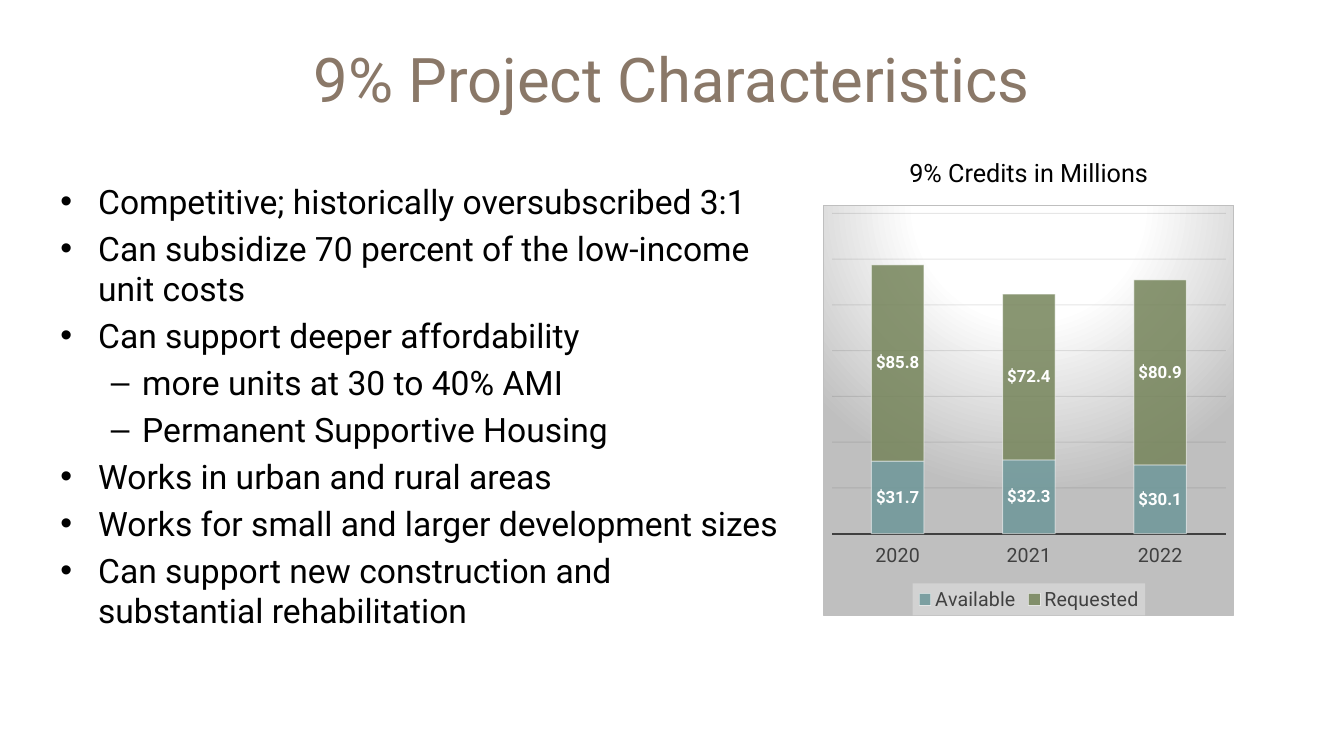
from dataclasses import dataclass

from pptx import Presentation
from pptx.chart.chart import Chart
from pptx.chart.data import CategoryChartData
from pptx.dml.color import RGBColor as RGB
from pptx.enum.chart import XL_CHART_TYPE as ChartType
from pptx.enum.chart import XL_LABEL_POSITION as LabelPos
from pptx.enum.chart import XL_LEGEND_POSITION as LegendPos
from pptx.enum.chart import XL_TICK_LABEL_POSITION as TickLabelPos
from pptx.enum.chart import XL_TICK_MARK as TickMark
from pptx.enum.text import MSO_ANCHOR as Anchor
from pptx.enum.text import MSO_AUTO_SIZE as AutoSize
from pptx.enum.text import PP_ALIGN as Align
from pptx.oxml import parse_xml
from pptx.oxml.ns import nsdecls, qn
from pptx.util import Cm, Pt


@dataclass(frozen=True)
class Theme:
    font: str = "Roboto"
    title: str = "8A7868"
    text: str = "000000"
    axis: str = "404040"
    grid: str = "0D0D0D"
    light: str = "FFFFFF"
    shade: str = "BFBFBF"
    legend: str = "F2F2F2"
    title_size: int = 44
    body_size: int = 24
    caption_size: int = 18
    axis_size: int = 14
    label_size: int = 12
    chart_size: int = 10


@dataclass(frozen=True)
class Box:
    left: float
    top: float
    width: float
    height: float

    def lengths(self) -> tuple:
        return Cm(self.left), Cm(self.top), Cm(self.width), Cm(self.height)


@dataclass(frozen=True)
class Level:
    bullet: str
    indent: float
    hanging: float


@dataclass(frozen=True)
class Item:
    text: str
    level: int = 0


@dataclass(frozen=True)
class Series:
    name: str
    values: tuple
    color: str


THEME = Theme()
TITLE_BOX = Box(1.7, 0.36, 30.48, 3.18)
BODY_BOX = Box(1.27, 4.42, 18.62, 11.84)
CAPTION_BOX = Box(22.43, 3.84, 6.99, 1.02)
CHART_BOX = Box(20.75, 5.16, 10.36, 10.36)
LEVELS = (Level("•", 0.95, 0.95), Level("–", 2.06, 0.79))
ITEMS = (
    Item("Competitive; historically oversubscribed 3:1"),
    Item("Can subsidize 70 percent of the low-income unit costs"),
    Item("Can support deeper affordability"),
    Item("more units at 30 to 40% AMI", 1),
    Item("Permanent Supportive Housing", 1),
    Item("Works in urban and rural areas"),
    Item("Works for small and larger development sizes"),
    Item("Can support new construction and substantial rehabilitation"),
)
YEARS = ("2020", "2021", "2022")
CREDITS = (
    Series("Available", (31.7, 32.3, 30.1), "6D9799"),
    Series("Requested", (85.8, 72.4, 80.9), "75845A"),
)


def style_font(font, size: int, color: str, bold: bool = False) -> None:
    font.name = THEME.font
    font.size = Pt(size)
    font.bold = bold
    font.color.rgb = RGB.from_string(color)


def place(sp, box: Box) -> None:
    sp.left, sp.top, sp.width, sp.height = box.lengths()


def set_alpha(fmt_parent, percent: int) -> None:
    for clr in fmt_parent.iter(qn("a:srgbClr")):
        clr.append(parse_xml(f'<a:alpha {nsdecls("a")} val="{percent * 1000}"/>'))


def style_line(line, color: str, width: float) -> None:
    line.color.rgb = RGB.from_string(color)
    line.width = Pt(width)


def add_title(s, text: str) -> None:
    sp = s.shapes.title
    place(sp, TITLE_BOX)
    tf = sp.text_frame
    tf.text = text
    tf.vertical_anchor = Anchor.MIDDLE
    p = tf.paragraphs[0]
    p.alignment = Align.CENTER
    style_font(p.runs[0].font, THEME.title_size, THEME.title)


def add_body(s, items: tuple) -> None:
    sp = s.placeholders[1]
    place(sp, BODY_BOX)
    tf = sp.text_frame
    tf.text = "\n".join(item.text for item in items)
    tf.auto_size = AutoSize.NONE
    for i, (p, item) in enumerate(zip(tf.paragraphs, items)):
        level = LEVELS[item.level]
        p.level = item.level
        pPr = p._p.get_or_add_pPr()
        pPr.set("marL", str(Cm(level.indent)))
        pPr.set("indent", str(-Cm(level.hanging)))
        pPr.append(parse_xml(f'<a:buChar {nsdecls("a")} char="{level.bullet}"/>'))
        p.space_before = Pt(0.2 * THEME.body_size if i else 0)
        style_font(p.runs[0].font, THEME.body_size, THEME.text)


def add_caption(s, text: str) -> None:
    tf = s.shapes.add_textbox(*CAPTION_BOX.lengths()).text_frame
    tf.word_wrap = True
    tf.auto_size = AutoSize.SHAPE_TO_FIT_TEXT
    tf.text = text
    p = tf.paragraphs[0]
    p.alignment = Align.CENTER
    style_font(p.runs[0].font, THEME.caption_size, THEME.text)


def fill_background(chart: Chart) -> None:
    stops = "".join(
        f'<a:gs pos="{pos * 1000}"><a:srgbClr val="{color}"/></a:gs>'
        for pos, color in ((0, THEME.light), (39, THEME.light), (100, THEME.shade))
    )
    spPr = parse_xml(
        f'<c:spPr {nsdecls("c", "a")}><a:gradFill><a:gsLst>{stops}</a:gsLst>'
        '<a:path path="circle">'
        '<a:fillToRect l="50000" t="-80000" r="50000" b="180000"/></a:path></a:gradFill>'
        f'<a:ln w="{Pt(0.75)}"><a:solidFill><a:srgbClr val="{THEME.shade}"/>'
        "</a:solidFill></a:ln></c:spPr>"
    )
    chart._chartSpace.find(qn("c:chart")).addnext(spPr)


def style_axes(chart: Chart) -> None:
    cat = chart.category_axis
    cat.major_tick_mark = TickMark.NONE
    cat.minor_tick_mark = TickMark.NONE
    cat.tick_label_position = TickLabelPos.LOW
    style_font(cat.tick_labels.font, THEME.axis_size, THEME.axis)
    style_line(cat.format.line, THEME.axis, 1.5)
    val = chart.value_axis
    val.minimum_scale, val.maximum_scale, val.major_unit = 0, 140, 20
    val.has_major_gridlines = True
    style_line(val.major_gridlines.format.line, THEME.grid, 0.75)
    set_alpha(val._element.find(qn("c:majorGridlines")), 10)
    val.visible = False


def style_legend(chart: Chart) -> None:
    chart.has_legend = True
    legend = chart.legend
    legend.position = LegendPos.BOTTOM
    legend.include_in_layout = False
    style_font(legend.font, THEME.axis_size, THEME.axis)
    spPr = parse_xml(
        f'<c:spPr {nsdecls("c", "a")}><a:solidFill>'
        f'<a:srgbClr val="{THEME.legend}"/></a:solidFill></c:spPr>'
    )
    set_alpha(spPr, 39)
    legend._element.find(qn("c:txPr")).addprevious(spPr)


def style_series(chart: Chart, credits: tuple) -> None:
    plot = chart.plots[0]
    plot.gap_width, plot.overlap, plot.vary_by_categories = 150, 100, False
    for ser, credit in zip(plot.series, credits):
        ser.format.fill.solid()
        ser.format.fill.fore_color.rgb = RGB.from_string(credit.color)
        set_alpha(ser._element, 85)
        style_line(ser.format.line, THEME.light, 0.75)
        set_alpha(ser._element.find(qn("c:spPr")).find(qn("a:ln")), 50)
        labels = ser.data_labels
        labels.show_value = True
        labels.position = LabelPos.CENTER
        labels.number_format = '"$"#,##0.0'
        labels.number_format_is_linked = False
        style_font(labels.font, THEME.label_size, THEME.light, bold=True)


def add_credits_chart(s, credits: tuple) -> None:
    data = CategoryChartData()
    data.categories = YEARS
    for credit in credits:
        data.add_series(credit.name, credit.values)
    frame = s.shapes.add_chart(ChartType.COLUMN_STACKED, *CHART_BOX.lengths(), data)
    chart = frame.chart
    chart.has_title = False
    style_font(chart.font, THEME.chart_size, THEME.text)
    fill_background(chart)
    style_axes(chart)
    style_legend(chart)
    style_series(chart, credits)


def main() -> None:
    prs = Presentation()
    prs.slide_width, prs.slide_height = Cm(33.87), Cm(19.05)
    s = prs.slides.add_slide(prs.slide_layouts[1])
    add_title(s, "9% Project Characteristics")
    add_body(s, ITEMS)
    add_caption(s, "9% Credits in Millions")
    add_credits_chart(s, CREDITS)
    prs.save("out.pptx")


if __name__ == "__main__":
    main()
